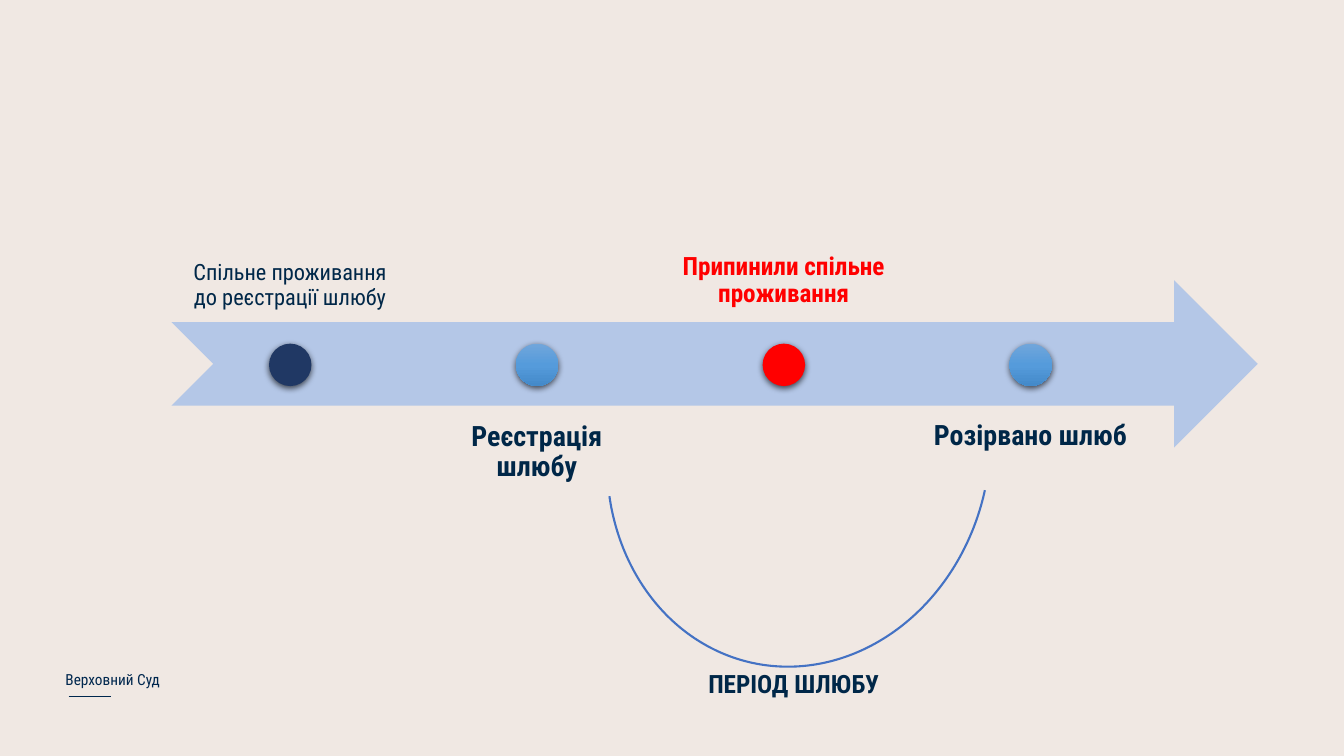
from lxml.etree import SubElement
from pptx import Presentation
from pptx.dml.color import RGBColor
from pptx.enum.shapes import MSO_CONNECTOR, MSO_SHAPE
from pptx.enum.text import MSO_ANCHOR, PP_ALIGN
from pptx.oxml.ns import qn
from pptx.util import Cm, Pt

FONT = "Roboto Condensed"
NAVY, INK, RED = "00274E", "002748", "FF0000"
BLUES = ("71A6DB", "559BDB", "448ACA")
STEP = 6.22
EVENTS = (
    ("Спільне проживання до реєстрації шлюбу", 16, INK, False, ("203864",)),
    ("Реєстрація шлюбу", 20, INK, True, BLUES),
    ("Припинили спільне проживання", 18, RED, True, (RED,)),
    ("Розірвано шлюб", 20, INK, True, BLUES),
)


def paint(color, tone):
    """Set a colour format from a hex string."""
    color.rgb = RGBColor.from_string(tone)


def add_form(slide, kind, box, tone=None):
    """Add a preset shape without outline or shadow."""
    form = slide.shapes.add_shape(kind, *map(Cm, box))
    form.shadow.inherit = False
    form.line.fill.background()
    if tone:
        form.fill.solid()
        paint(form.fill.fore_color, tone)
    else:
        form.fill.background()
    return form


def add_text(slide, box, text, size, tone, bold=False, inset=None,
             align=PP_ALIGN.LEFT, anchor=MSO_ANCHOR.TOP, space=1.0):
    """Add a wrapped text box with one run."""
    frame = slide.shapes.add_textbox(*map(Cm, box)).text_frame
    frame.word_wrap = True
    frame.vertical_anchor = anchor
    if inset is not None:
        frame.margin_left = frame.margin_right = Cm(inset)
        frame.margin_top = frame.margin_bottom = Cm(inset)
    para = frame.paragraphs[0]
    para.alignment = align
    para.line_spacing = space
    run = para.add_run()
    run.text = text
    run.font.name = FONT
    run.font.size = Pt(size)
    run.font.bold = bold
    paint(run.font.color, tone)


def add_shade(form):
    """Give a shape a soft shadow below it."""
    effects = form._element.spPr.find(qn("a:effectLst"))
    shade = SubElement(effects, qn("a:outerShdw"), blurRad=str(Pt(4.5)),
                       dist=str(Pt(1.5)), dir="5400000", algn="ctr", rotWithShape="0")
    color = SubElement(shade, qn("a:srgbClr"), val="000000")
    SubElement(color, qn("a:alpha"), val="63000")


def add_blend(form, tones):
    """Fill a shape with an even top-down gradient."""
    form.fill.gradient()
    form.fill.gradient_angle = 270
    stops = form._element.spPr.find(qn("a:gradFill")).find(qn("a:gsLst"))
    for stop in list(stops):
        stops.remove(stop)
    for i, tone in enumerate(tones):
        place = 100000 * i // (len(tones) - 1)
        stop = SubElement(stops, qn("a:gs"), pos=str(place))
        SubElement(stop, qn("a:srgbClr"), val=tone)


def add_event(slide, i, text, size, tone, bold, tones):
    """Add a timeline dot with its label above or below the arrow."""
    below = i % 2 == 1
    add_text(slide, (4.34 + i * STEP, 10.24 if below else 3.91, 5.94, 4.22),
             text, size, tone, bold, inset=size * 0.02, align=PP_ALIGN.CENTER,
             anchor=MSO_ANCHOR.TOP if below else MSO_ANCHOR.BOTTOM, space=0.9)
    dot = add_form(slide, MSO_SHAPE.OVAL, (6.78 + i * STEP, 8.66, 1.07, 1.07), tones[0])
    if len(tones) > 1:
        add_blend(dot, tones)
    add_shade(dot)


def add_arc(slide):
    """Add the arc that spans the marriage."""
    arc = add_form(slide, MSO_SHAPE.ARC, (14.63, 6.53, 11, 9.6))
    arc.adjustments[0] = 162
    arc.adjustments[1] = 38.32
    arc.rotation = 102.3
    paint(arc.line.color, "4472C4")
    arc.line.width = Pt(1.5)


def add_foot(slide):
    """Add the court name and the rule under it."""
    rule = slide.shapes.add_connector(
        MSO_CONNECTOR.STRAIGHT, Cm(1.73), Cm(17.55), Cm(2.79), Cm(17.55))
    paint(rule.line.color, NAVY)
    rule.line.width = Pt(1.12)
    SubElement(rule._element.spPr, qn("a:effectLst"))
    add_text(slide, (1.4, 16.59, 3.66, 1.02), "Верховний Суд", 10.9, NAVY,
             anchor=MSO_ANCHOR.MIDDLE, space=1.14)


def main():
    """Build the marriage timeline slide."""
    deck = Presentation()
    deck.slide_width, deck.slide_height = Cm(33.87), Cm(19.05)
    slide = deck.slides.add_slide(deck.slide_layouts[6])
    slide.background.fill.solid()
    paint(slide.background.fill.fore_color, "F0E8E3")
    add_foot(slide)
    add_form(slide, MSO_SHAPE.NOTCHED_RIGHT_ARROW, (4.32, 7.06, 27.38, 4.22), "B4C7E7")
    for i, event in enumerate(EVENTS):
        add_event(slide, i, *event)
    add_arc(slide)
    add_text(slide, (17.6, 16.71, 5.92, 1.02), "ПЕРІОД ШЛЮБУ", 18, INK, True)
    deck.save("out.pptx")


if __name__ == "__main__":
    main()
